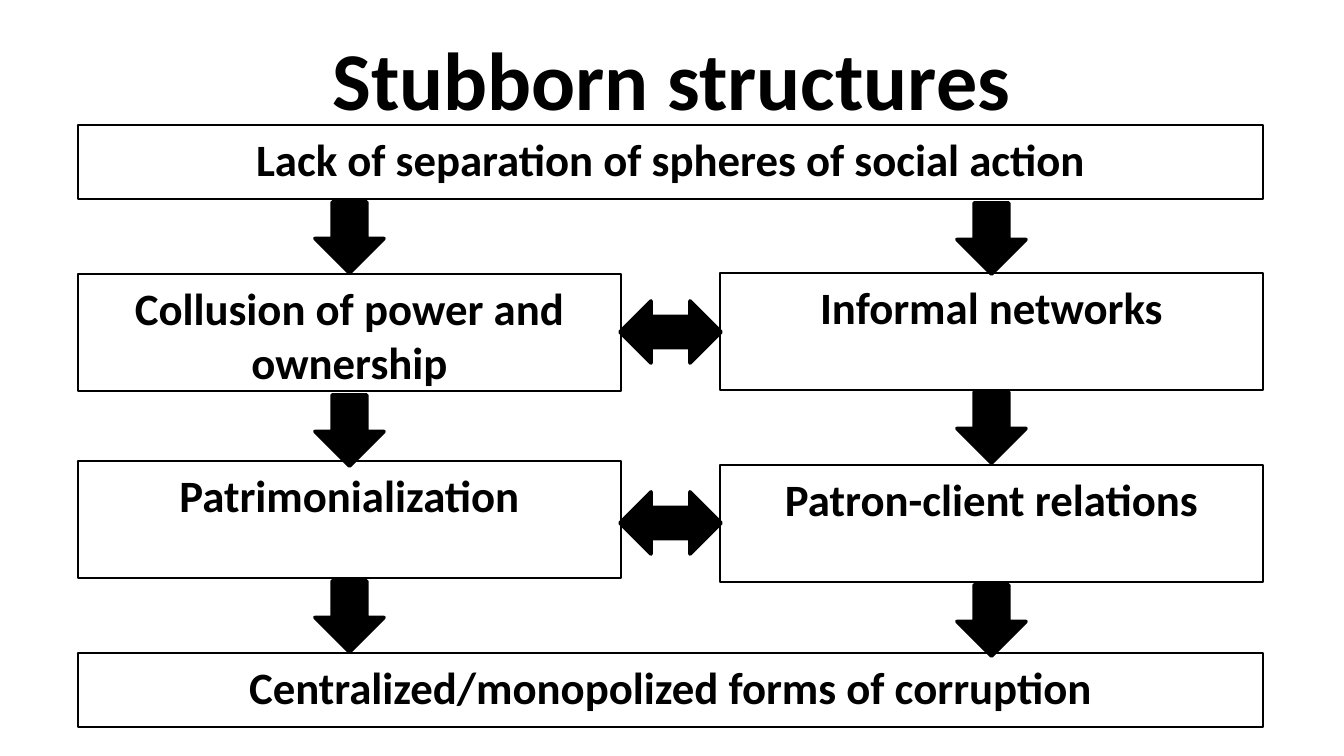
from lxml import etree
from pptx import Presentation
from pptx import util as u
from pptx.dml.color import RGBColor
from pptx.enum import shapes, text
from pptx.oxml.ns import qn

EMU_PER_PX = 914400 / 134.4
COLOURS = {"ink": "000000", "paper": "FFFFFF"}
FONT = "Calibri"

TITLE = ("Stubborn structures", 67, 19, 1210, 117)
LEFT, RIGHT = 78, 720
FULL, HALF = 1185, 543
LOW, HIGH = 74, 117
BOXES = [
    ("Lack of separation of spheres of social action", LEFT, 125, FULL, LOW),
    ("Collusion of power and ownership", LEFT, 274, HALF, HIGH),
    ("Informal networks", RIGHT, 273, HALF, HIGH),
    ("Patrimonialization", LEFT, 461, HALF, HIGH),
    ("Patron-client relations", RIGHT, 465, HALF, HIGH),
    ("Centralized/monopolized forms of corruption", LEFT, 653, FULL, LOW),
]
DOWN_ARROWS = {LEFT: (202, 395, 581), RIGHT: (203, 392, 585)}
DOWN_SIZE = (69, 71)
LINK_ARROWS = (301, 492)
LINK_SIZE = (101, 62)


def px(*lengths):
    return [u.Emu(round(length * EMU_PER_PX)) for length in lengths]


def colour(name):
    return RGBColor.from_string(COLOURS[name])


def write(box, words, size, anchor):
    frame = box.text_frame
    frame.word_wrap = True
    frame.vertical_anchor = anchor
    para = frame.paragraphs[0]
    para.alignment = text.PP_ALIGN.CENTER
    span = para.add_run()
    span.text = words
    span.font.name = FONT
    span.font.size = u.Pt(size)
    span.font.bold = True
    span.font.color.rgb = colour("ink")


def add_shape(page, kind, place, fill=None, weight=0.75):
    shape = page.shapes.add_shape(kind, *px(*place))
    shape.shadow.inherit = False
    if fill:
        shape.fill.solid()
        shape.fill.fore_color.rgb = colour(fill)
    else:
        shape.fill.background()
    shape.line.color.rgb = colour("ink")
    shape.line.width = u.Pt(weight)
    return shape


def add_arrow(page, kind, place):
    arrow = add_shape(page, kind, place, fill="ink", weight=2)
    etree.SubElement(arrow.line._get_or_add_ln(), qn("a:round"))


def main():
    deck = Presentation()
    deck.slide_width, deck.slide_height = px(1344, 756)
    page = deck.slides.add_slide(deck.slide_layouts[6])
    page.background.fill.solid()
    page.background.fill.fore_color.rgb = colour("paper")

    words, *place = TITLE
    write(page.shapes.add_textbox(*px(*place)), words, 44, text.MSO_ANCHOR.MIDDLE)

    for words, *place in BOXES:
        box = add_shape(page, shapes.MSO_SHAPE.RECTANGLE, place)
        write(box, words, 24, text.MSO_ANCHOR.TOP)

    for column, tops in DOWN_ARROWS.items():
        left = column + (HALF - DOWN_SIZE[0]) / 2
        for top in tops:
            add_arrow(page, shapes.MSO_SHAPE.DOWN_ARROW, (left, top, *DOWN_SIZE))

    left = (LEFT + HALF + RIGHT - LINK_SIZE[0]) / 2
    for top in LINK_ARROWS:
        add_arrow(page, shapes.MSO_SHAPE.LEFT_RIGHT_ARROW, (left, top, *LINK_SIZE))

    deck.save("out.pptx")


if __name__ == "__main__":
    main()
